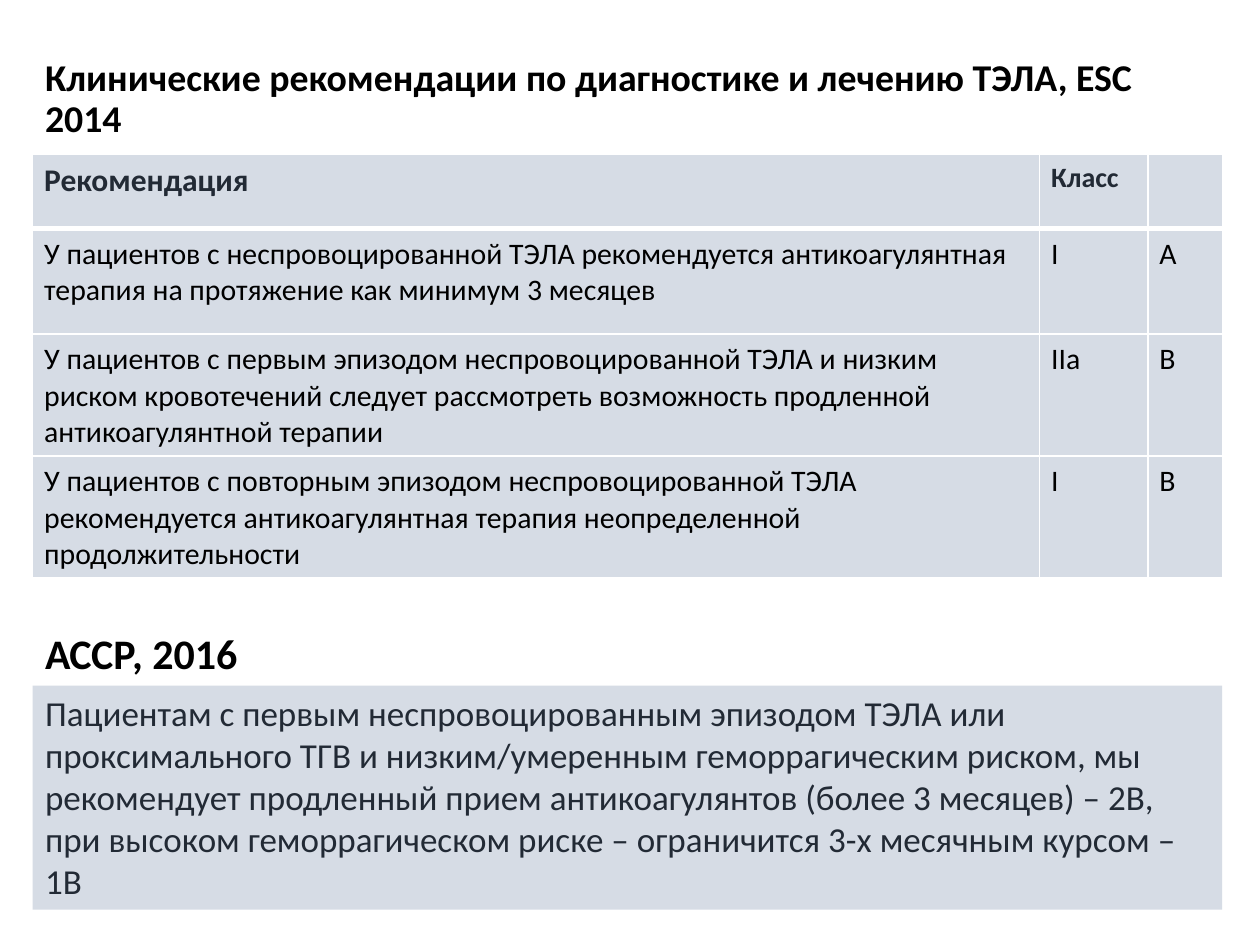
from dataclasses import dataclass

from lxml import etree
from pptx import Presentation
from pptx.dml.color import RGBColor
from pptx.enum.shapes import MSO_SHAPE
from pptx.enum.text import MSO_ANCHOR, PP_ALIGN
from pptx.oxml.ns import qn
from pptx.util import Cm, Pt

RECT = MSO_SHAPE.RECTANGLE
TOP, MIDDLE = MSO_ANCHOR.TOP, MSO_ANCHOR.MIDDLE
LEFT = PP_ALIGN.LEFT


@dataclass(frozen=True)
class Theme:
    font: str = "Calibri"
    ink: str = "000000"
    navy: str = "222A35"
    panel: str = "D6DCE5"
    rule: str = "FFFFFF"
    title: float = 21.6
    head: float = 18
    label: float = 16
    cell: float = 17
    sub: float = 24
    body: float = 20


THEME = Theme()
EDGE = Cm(0.66)
WIDTH = Cm(23.98)
COLS = [Cm(20.3), Cm(2.18), Cm(1.5)]
ROWS = [Cm(1.5), Cm(2.13), Cm(2.44), Cm(2.44)]

TITLE = "Клинические рекомендации по диагностике и лечению ТЭЛА, ESC 2014"
HEAD = ["Рекомендация", "Класс", ""]
ADVICE = [
    ("У пациентов с неспровоцированной ТЭЛА рекомендуется антикоагулянтная "
     "терапия на протяжение как минимум 3 месяцев", "I", "A"),
    ("У пациентов с первым эпизодом неспровоцированной ТЭЛА и низким риском "
     "кровотечений следует рассмотреть возможность продленной "
     "антикоагулянтной терапии", "IIa", "B"),
    ("У пациентов с повторным эпизодом неспровоцированной ТЭЛА рекомендуется "
     "антикоагулянтная терапия неопределенной продолжительности", "I", "B"),
]
SUB = "АССР, 2016"
BODY = ("Пациентам с первым неспровоцированным эпизодом ТЭЛА или "
        "проксимального ТГВ и низким/умеренным геморрагическим риском, мы "
        "рекомендует продленный прием антикоагулянтов (более 3 месяцев) – 2В, "
        "при высоком геморрагическом риске – ограничится 3-х месячным "
        "курсом – 1В")


def write(frame, text, size, color=THEME.ink, bold=False, anchor=TOP, lead=None):
    frame.word_wrap = True
    frame.vertical_anchor = anchor
    para = frame.paragraphs[0]
    para.alignment = LEFT
    para.line_spacing = lead
    para.font.size = Pt(size)
    if text:
        run = para.add_run()
        run.text = text
        font = run.font
        font.name, font.size, font.bold = THEME.font, Pt(size), bold
        font.color.rgb = RGBColor.from_string(color)


def add_text(slide, text, top, width, height, **style):
    box = slide.shapes.add_textbox(EDGE, top, width, height)
    write(box.text_frame, text, **style)


def add_panel(slide, text, top, height, **style):
    box = slide.shapes.add_shape(RECT, EDGE, top, WIDTH, height)
    box.shadow.inherit = False
    box.fill.solid()
    box.fill.fore_color.rgb = RGBColor.from_string(THEME.panel)
    box.line.fill.background()
    write(box.text_frame, text, **style)


def set_edges(cell, **widths):
    """Draw cell borders; the XML needs them ahead of the fill."""
    props = cell._tc.get_or_add_tcPr()
    for i, side in enumerate("LRTB"):
        line = etree.Element(qn(f"a:ln{side}"), w=str(Pt(widths.get(side, 1))))
        fill = etree.SubElement(line, qn("a:solidFill"))
        etree.SubElement(fill, qn("a:srgbClr"), val=THEME.rule)
        props.insert(i, line)


def fill_cell(cell, text, **style):
    cell.margin_left = cell.margin_right = Cm(0.23)
    cell.margin_top = cell.margin_bottom = Cm(0.15)
    cell.fill.solid()
    cell.fill.fore_color.rgb = RGBColor.from_string(THEME.panel)
    write(cell.text_frame, text, **style)


def add_grid(slide, top):
    frame = slide.shapes.add_table(
        len(ROWS), len(COLS), EDGE, top, WIDTH, sum(ROWS))
    table = frame.table
    table.horz_banding = False
    for col, width in zip(table.columns, COLS):
        col.width = width
    for row, height in zip(table.rows, ROWS):
        row.height = height
    for c, text in enumerate(HEAD):
        cell = table.cell(0, c)
        size = THEME.label if c else THEME.head
        fill_cell(cell, text, size=size, color=THEME.navy, bold=True)
        set_edges(cell, B=3)
    for r, line in enumerate(ADVICE, 1):
        for c, text in enumerate(line):
            cell = table.cell(r, c)
            fill_cell(cell, text, size=THEME.cell)
            set_edges(cell, T=3 if r == 1 else 1)


def main():
    deck = Presentation()
    deck.slide_width, deck.slide_height = Cm(25.4), Cm(19.05)
    slide = deck.slides.add_slide(deck.slide_layouts[6])
    add_text(slide, TITLE, Cm(1.55), WIDTH, Cm(0.91), size=THEME.title,
             bold=True, anchor=MIDDLE, lead=0.9)
    add_grid(slide, Cm(3.1))
    add_text(slide, SUB, Cm(12.52), Cm(23.44), Cm(1.27), size=THEME.sub,
             bold=True)
    add_panel(slide, BODY, Cm(13.82), Cm(4.52), size=THEME.body,
              color=THEME.navy)
    deck.save("out.pptx")


if __name__ == "__main__":
    main()
